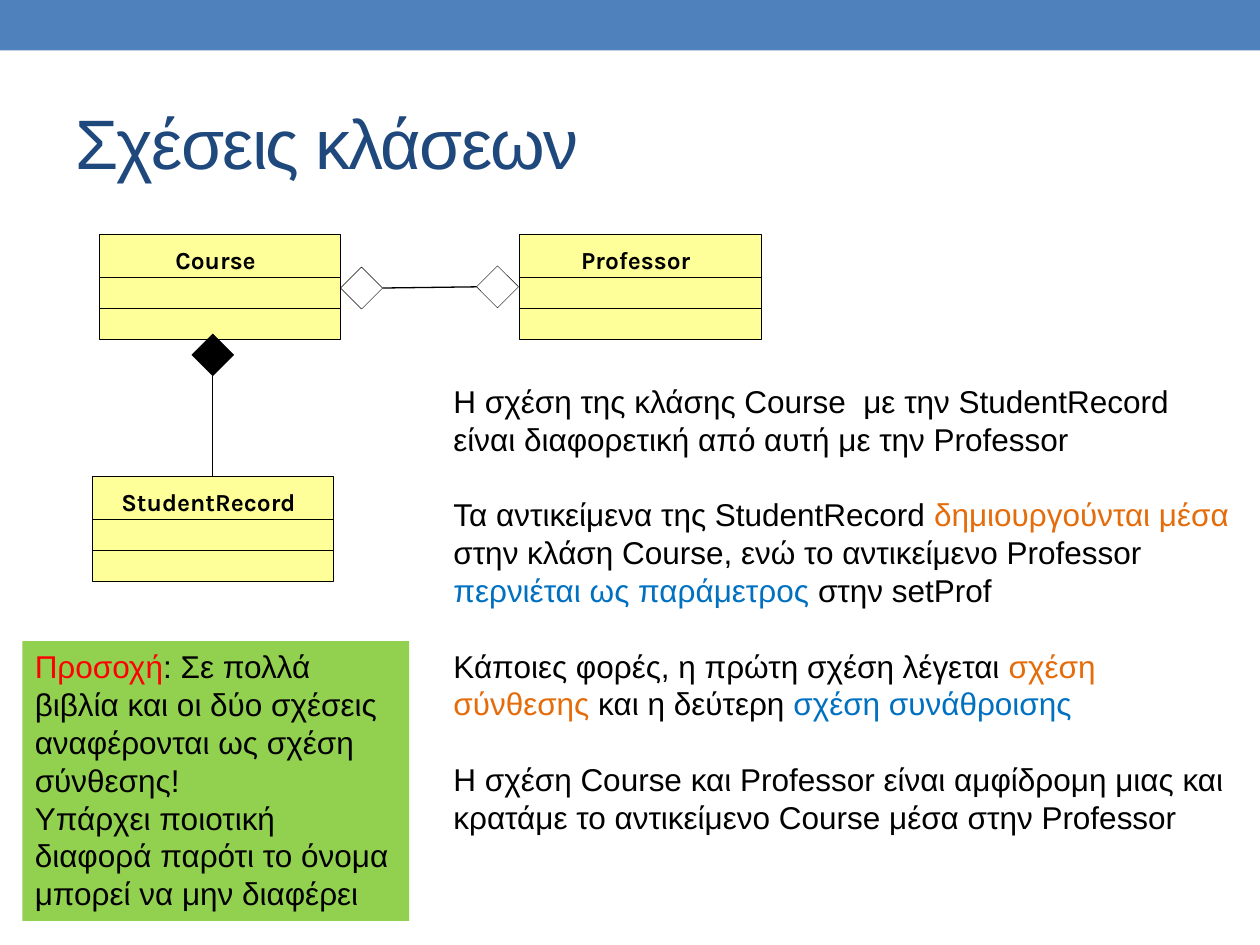
from lxml import etree
from pptx import Presentation
from pptx.dml.color import RGBColor
from pptx.enum import shapes, text
from pptx.oxml import ns
from pptx.util import Pt

BLACK = RGBColor(0x00, 0x00, 0x00)
BAND_BLUE = RGBColor(0x4F, 0x81, 0xBD)
TITLE_BLUE = RGBColor(0x1F, 0x49, 0x7D)
CLASS_YELLOW = RGBColor(0xFF, 0xFF, 0x99)
NOTE_GREEN = RGBColor(0x92, 0xD0, 0x50)
ORANGE = RGBColor(0xE4, 0x6C, 0x0A)
BLUE = RGBColor(0x00, 0x70, 0xC0)
RED = RGBColor(0xFF, 0x00, 0x00)

CLASS_WIDTH, CLASS_HEIGHT = 138, 60
DIAMOND = 24
TOP, LEFT, BOTTOM, RIGHT = range(4)

EXPLANATION = [
    ["Η σχέση της κλάσης Course  με την StudentRecord είναι διαφορετική από αυτή με την Professor"],
    ["Τα αντικείμενα της StudentRecord ", ("δημιουργούνται μέσα", ORANGE),
     " στην κλάση Course, ενώ το αντικείμενο Professor ",
     ("περνιέται ως παράμετρος ", BLUE), "στην setProf"],
    ["Κάποιες φορές, η πρώτη σχέση λέγεται ", ("σχέση σύνθεσης", ORANGE),
     " και η δεύτερη ", ("σχέση συνάθροισης", BLUE)],
    ["Η σχέση Course και Professor είναι αμφίδρομη μιας και κρατάμε "
     "το αντικείμενο Course μέσα στην Professor"],
]
WARNING = [
    [("Προσοχή", RED), ": Σε πολλά βιβλία και οι δύο σχέσεις αναφέρονται ως σχέση σύνθεσης!"],
    ["Υπάρχει ποιοτική διαφορά παρότι το όνομα μπορεί να μην διαφέρει"],
]


def write(shape, paragraphs, *, size=18, font="Arial", color=BLACK, bold=False, gap=0,
          align=text.PP_ALIGN.LEFT, anchor=text.MSO_ANCHOR.TOP, tracking=None):
    """Fill a shape with paragraphs of plain strings and (string, colour) pairs."""
    frame = shape.text_frame
    frame.word_wrap = True
    frame.vertical_anchor = anchor
    for index, pieces in enumerate(paragraphs):
        para = frame.add_paragraph() if index else frame.paragraphs[0]
        para.alignment = align
        para.space_before = Pt(gap if index else 0)
        for piece in pieces:
            words, tint = (piece, color) if isinstance(piece, str) else piece
            span = para.add_run()
            span.text = words
            span.font.size = Pt(size)
            span.font.name = font
            span.font.bold = bold
            span.font.color.rgb = tint
            if tracking is not None:
                span.font._element.set("spc", str(tracking * 100))


def add_text(page, left, top, width, height, paragraphs, **style):
    """Add a text box with formatted paragraphs."""
    box = page.shapes.add_textbox(Pt(left), Pt(top), Pt(width), Pt(height))
    write(box, paragraphs, **style)
    return box


def add_block(page, kind, left, top, width, height, *, fill=None, outline=False):
    """Add a flat preset shape, optionally filled and outlined."""
    block = page.shapes.add_shape(kind, Pt(left), Pt(top), Pt(width), Pt(height))
    block.shadow.inherit = False
    if fill is None:
        block.fill.background()
    else:
        block.fill.solid()
        block.fill.fore_color.rgb = fill
    if outline:
        block.line.color.rgb = BLACK
        block.line.width = Pt(0.25)
    else:
        block.line.fill.background()
    return block


def add_rectangle(page, left, top, width, height, **style):
    """Add a flat rectangle."""
    return add_block(page, shapes.MSO_SHAPE.RECTANGLE, left, top, width, height, **style)


def add_diamond(page, left, top, fill=None):
    """Add the diamond that marks an aggregation or a composition."""
    return add_block(page, shapes.MSO_SHAPE.DIAMOND, left, top, DIAMOND, DIAMOND,
                     fill=fill, outline=True)


def add_line(page, start=(0, 0), end=(0, 0), width=0.75):
    """Add a straight black line without a shadow."""
    line = page.shapes.add_connector(shapes.MSO_CONNECTOR.STRAIGHT,
                                     *(Pt(value) for value in (*start, *end)))
    line.line.color.rgb = BLACK
    line.line.width = Pt(width)
    etree.SubElement(line._element.spPr, ns.qn("a:effectLst"))
    return line


def join(page, first, first_side, second, second_side):
    """Connect the sides of two shapes with a line."""
    line = add_line(page)
    line.begin_connect(first, first_side)
    line.end_connect(second, second_side)


def add_class(page, name, left, top):
    """Add a class box with a name and two empty compartments."""
    frame = add_rectangle(page, left, top, CLASS_WIDTH, CLASS_HEIGHT,
                          fill=CLASS_YELLOW, outline=True)
    add_text(page, left + 4.3, top + 2.4, 124.6, 24.5, [[name]], size=14, font="Karla",
             bold=True, align=text.PP_ALIGN.CENTER)
    for offset in (24.4, 42.4):
        add_line(page, (left, top + offset), (left + CLASS_WIDTH, top + offset), 0.25)
    return frame


def add_diagram(page):
    """Draw the three classes and their relations."""
    course_left, student_left, professor_left = 56.6, 52.6, 296.8
    add_class(page, "Course", course_left, 134)
    add_class(page, "Professor", professor_left, 134)
    student = add_class(page, "StudentRecord", student_left, 272.2)
    course_end = add_diamond(page, course_left + CLASS_WIDTH, 152.6)
    professor_end = add_diamond(page, professor_left - DIAMOND - 0.5, 151.9)
    composition = add_diamond(page, student_left + (CLASS_WIDTH - DIAMOND) / 2, 190.8, BLACK)
    join(page, course_end, RIGHT, professor_end, LEFT)
    join(page, composition, BOTTOM, student, TOP)


def main():
    """Build the slide and save the deck."""
    deck = Presentation()
    deck.slide_width, deck.slide_height = Pt(720), Pt(540)
    page = deck.slides.add_slide(deck.slide_layouts[6])
    add_rectangle(page, 0, 0, 720, 28.8, fill=BAND_BLUE)
    add_text(page, 36, 42, 648, 78, [["Σχέσεις κλάσεων"]], size=40, color=TITLE_BLUE,
             anchor=text.MSO_ANCHOR.MIDDLE, tracking=-1)
    add_diagram(page)
    add_text(page, 252, 214.8, 459.4, 269.3, EXPLANATION, gap=21.6)
    note = add_rectangle(page, 12.8, 366.4, 221, 159.8, fill=NOTE_GREEN)
    write(note, WARNING)
    deck.save("out.pptx")


if __name__ == "__main__":
    main()
